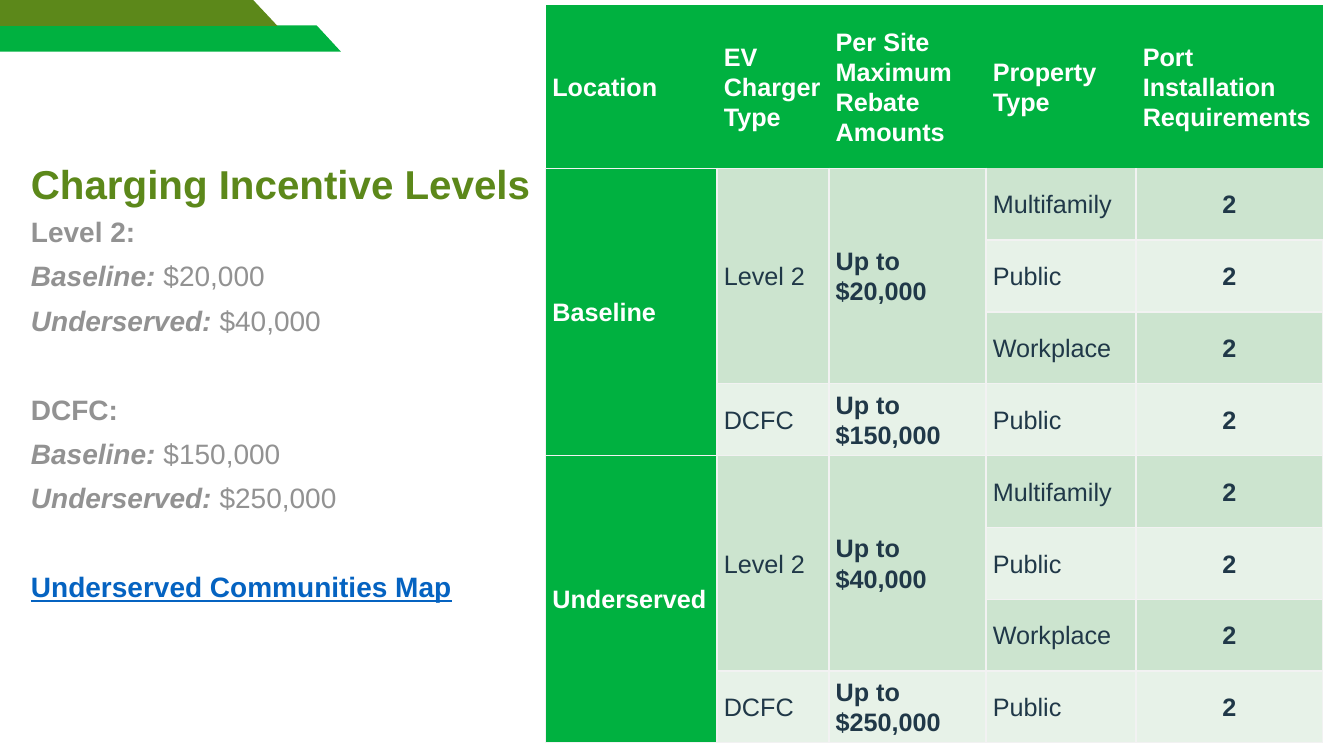
from dataclasses import dataclass

from lxml import etree
from pptx import Presentation
from pptx.dml.color import RGBColor
from pptx.enum.text import MSO_ANCHOR, PP_ALIGN
from pptx.oxml.ns import qn
from pptx.util import Cm, Pt

TOP, MIDDLE, BOTTOM = MSO_ANCHOR.TOP, MSO_ANCHOR.MIDDLE, MSO_ANCHOR.BOTTOM
LEFT, CENTER = PP_ALIGN.LEFT, PP_ALIGN.CENTER


@dataclass(frozen=True)
class Theme:
    font: str = "Arial"
    green: str = "00B140"
    olive: str = "5C881A"
    gray: str = "929292"
    link: str = "0563C1"
    navy: str = "203848"
    white: str = "FFFFFF"
    dark_band: str = "CCE4CF"
    light_band: str = "E7F2E8"
    border: str = "F2F2F2"
    title_size: float = 28.8
    body_size: float = 20
    table_size: float = 18


THEME = Theme()

STRIPES = [
    (THEME.green, [(0, 0.64), (7.98, 0.64), (8.59, 1.3), (0, 1.3)]),
    (THEME.olive, [(0, 0), (6.38, 0), (6.99, 0.65), (0, 0.65)]),
]

HEADERS = ["Location", "EV Charger Type", "Per Site Maximum Rebate Amounts",
           "Property Type", "Port Installation Requirements"]
COLUMN_WIDTHS = [4.32, 2.82, 3.96, 3.78, 4.7]
HEADER_HEIGHT, ROW_HEIGHT = 4.11, 1.81
LEVEL_2_PROPERTIES = ["Multifamily", "Public", "Workplace"]
PORTS = "2"
# Location, Level 2 rebate, DCFC rebate
REBATES = [("Baseline", "$20,000", "$150,000"),
           ("Underserved", "$40,000", "$250,000")]


def add_stripe(slide, color, corners):
    points = [(Cm(x), Cm(y)) for x, y in corners]
    builder = slide.shapes.build_freeform(*points[0])
    builder.add_line_segments(points[1:], close=True)
    stripe = builder.convert_to_shape()
    stripe.shadow.inherit = False
    stripe.fill.solid()
    stripe.fill.fore_color.rgb = RGBColor.from_string(color)
    stripe.line.fill.background()


def add_run(paragraph, text, size, color, **formats):
    run = paragraph.add_run()
    run.text = text
    run.font.color.rgb = RGBColor.from_string(color)
    values = {"name": THEME.font, "size": Pt(size), **formats}
    for name, value in values.items():
        setattr(run.font, name, value)


def add_text_frame(slide, left, top, width, height, anchor):
    box = slide.shapes.add_textbox(Cm(left), Cm(top), Cm(width), Cm(height))
    box.text_frame.word_wrap = True
    box.text_frame.vertical_anchor = anchor
    return box.text_frame


def add_title(slide):
    frame = add_text_frame(slide, 0.53, 3.07, 13.21, 2.31, BOTTOM)
    heading = frame.paragraphs[0]
    heading.line_spacing = 0.9
    add_run(heading, "Charging Incentive Levels", THEME.title_size,
            THEME.olive, bold=True)


def add_incentive_summary(slide):
    strong = {"bold": True}
    label = {"bold": True, "italic": True}
    plain = {"bold": False}
    lines = [[("Level 2:", THEME.gray, strong)]]
    lines += [[(f"{name}: ", THEME.gray, label), (level_2, THEME.gray, plain)]
              for name, level_2, _ in REBATES]
    lines += [[("DCFC:", THEME.gray, strong)]]
    lines += [[(f"{name}: ", THEME.gray, label), (dcfc, THEME.gray, plain)]
              for name, _, dcfc in REBATES]
    lines += [[("Underserved Communities Map", THEME.link,
                {"bold": True, "underline": True})]]

    frame = add_text_frame(slide, 0.53, 5.38, 12.12, 12.78, TOP)
    group_size = len(REBATES) + 1
    for index, runs in enumerate(lines):
        paragraph = frame.paragraphs[0] if index == 0 else frame.add_paragraph()
        paragraph.line_spacing = 0.9
        if index:
            starts_group = index % group_size == 0
            paragraph.space_before = Pt(42 if starts_group else 10)
        for text, color, formats in runs:
            add_run(paragraph, text, THEME.body_size, color, **formats)


def set_borders(cell, sides):
    """Draw the named sides (L, R, T, B) and clear the others."""
    properties = cell._tc.get_or_add_tcPr()
    for position, side in enumerate("LRTB"):
        line = etree.Element(qn(f"a:ln{side}"), w=str(Pt(1)))
        if side in sides:
            fill = etree.SubElement(line, qn("a:solidFill"))
            etree.SubElement(fill, qn("a:srgbClr"), val=THEME.border)
        else:
            etree.SubElement(line, qn("a:noFill"))
        properties.insert(position, line)


def border_sides(row, column):
    if row == 0:
        return "B" if column < 3 else ""
    if row == 1 and column >= 3:
        return "LRB" if column == 3 else "LB"
    return "LRTB"


def style_cell(cell, fill):
    cell.fill.solid()
    cell.fill.fore_color.rgb = RGBColor.from_string(fill)
    formats = {"vertical_anchor": MIDDLE, "margin_left": Cm(0.17),
               "margin_right": Cm(0.17), "margin_top": 0, "margin_bottom": 0}
    for name, value in formats.items():
        setattr(cell, name, value)


def write_cell(cell, text, color, bold, alignment=LEFT):
    paragraph = cell.text_frame.paragraphs[0]
    paragraph.line_spacing = 1.07
    paragraph.alignment = alignment
    add_run(paragraph, text, THEME.table_size, color, bold=bold)


def write_location(table, first, name, level_2, dcfc):
    last = first + len(LEVEL_2_PROPERTIES)
    table.cell(first, 0).merge(table.cell(last, 0))
    write_cell(table.cell(first, 0), name, THEME.white, True)
    for column in (1, 2):
        table.cell(first, column).merge(table.cell(last - 1, column))
    for row, charger, amount in ((first, "Level 2", level_2),
                                 (last, "DCFC", dcfc)):
        write_cell(table.cell(row, 1), charger, THEME.navy, False)
        write_cell(table.cell(row, 2), f"Up to {amount}", THEME.navy, True)
    for row, property_type in enumerate(LEVEL_2_PROPERTIES + ["Public"], first):
        write_cell(table.cell(row, 3), property_type, THEME.navy, False)
        write_cell(table.cell(row, 4), PORTS, THEME.navy, True, CENTER)


def add_rebate_table(slide):
    block = len(LEVEL_2_PROPERTIES) + 1
    row_count = 1 + block * len(REBATES)
    height = HEADER_HEIGHT + ROW_HEIGHT * (row_count - 1)
    table = slide.shapes.add_table(
        row_count, len(HEADERS), Cm(13.75), Cm(0.13),
        Cm(sum(COLUMN_WIDTHS)), Cm(height)).table
    for column, width in zip(table.columns, COLUMN_WIDTHS):
        column.width = Cm(width)
    for index, row in enumerate(table.rows):
        row.height = Cm(ROW_HEIGHT if index else HEADER_HEIGHT)
        for column, cell in enumerate(row.cells):
            band = THEME.dark_band if index % 2 else THEME.light_band
            if column in (1, 2) and index % block:
                band = THEME.dark_band
            style_cell(cell, THEME.green if index == 0 or column == 0 else band)
            set_borders(cell, border_sides(index, column))

    for column, header in enumerate(HEADERS):
        write_cell(table.cell(0, column), header, THEME.white, True)
    for index, rebate in enumerate(REBATES):
        write_location(table, 1 + index * block, *rebate)


def main():
    presentation = Presentation()
    presentation.slide_width = Cm(33.87)
    presentation.slide_height = Cm(19.05)
    slide = presentation.slides.add_slide(presentation.slide_layouts[6])
    for color, corners in STRIPES:
        add_stripe(slide, color, corners)
    add_title(slide)
    add_incentive_summary(slide)
    add_rebate_table(slide)
    presentation.save("out.pptx")


if __name__ == "__main__":
    main()
